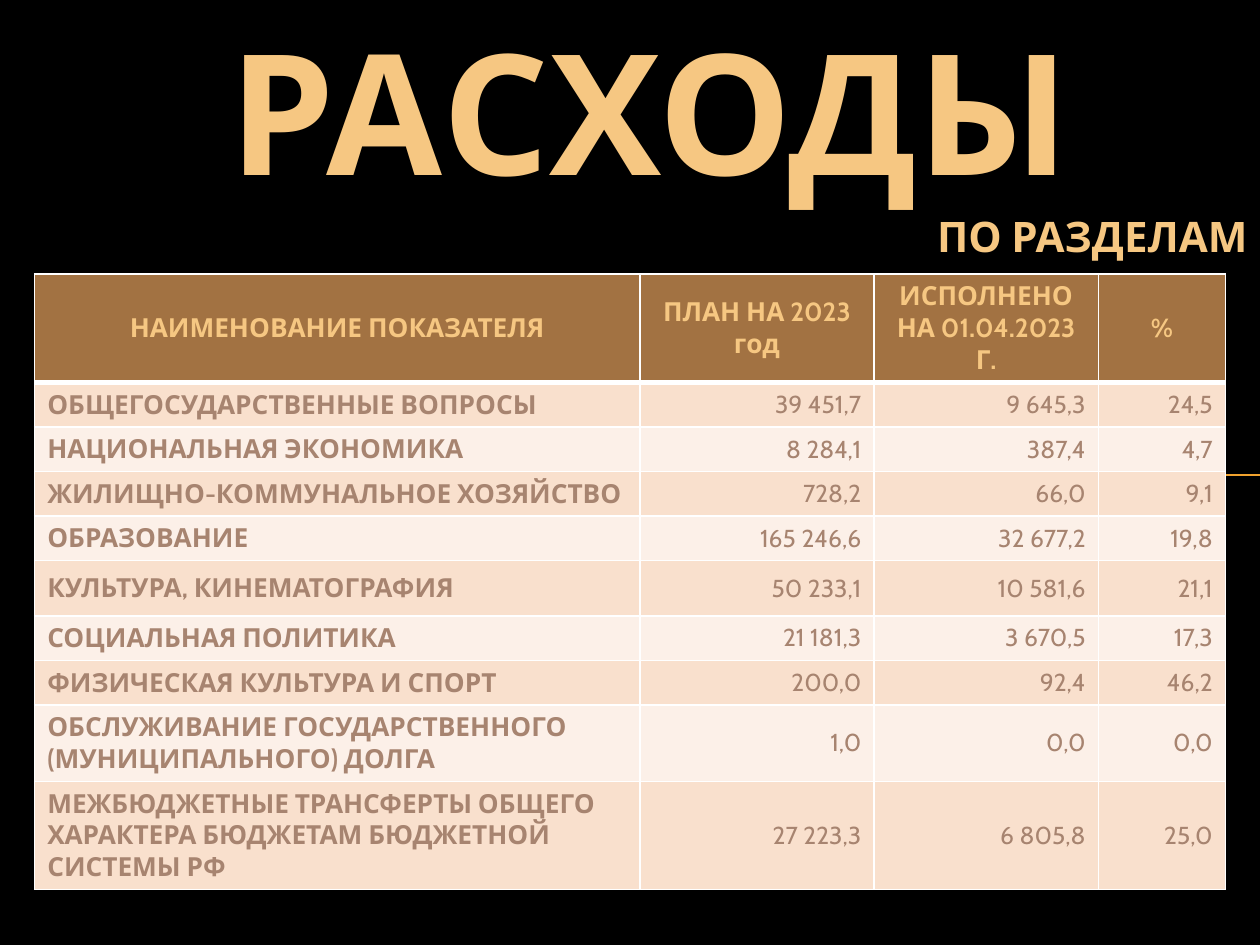
from dataclasses import dataclass

from lxml import etree
from pptx import Presentation
from pptx.dml.color import RGBColor
from pptx.enum.shapes import MSO_CONNECTOR
from pptx.enum.text import MSO_ANCHOR, PP_ALIGN
from pptx.oxml.ns import qn
from pptx.util import Pt

LEFT, CENTER, RIGHT = PP_ALIGN.LEFT, PP_ALIGN.CENTER, PP_ALIGN.RIGHT
TOP, MIDDLE = MSO_ANCHOR.TOP, MSO_ANCHOR.MIDDLE
STRAIGHT = MSO_CONNECTOR.STRAIGHT


@dataclass(frozen=True)
class Theme:
    font: str = "Cabin"
    background: str = "000000"
    heading: str = "F6C782"
    body: str = "A78470"
    accent: str = "F0A22E"
    border: str = "FFFFFF"
    header_fill: str = "A27242"
    bands: tuple = ("F9E0CD", "FCF0E8")
    title_size: int = 96
    subtitle_size: int = 24
    label_size: int = 15
    value_size: int = 14


THEME = Theme()

SLIDE_WIDTH, SLIDE_HEIGHT = 720, 540
HEADERS = ("НАИМЕНОВАНИЕ ПОКАЗАТЕЛЯ", "ПЛАН НА 2023 год",
           "ИСПОЛНЕНО НА 01.04.2023 Г.", "%")
EXPENSES = (
    ("ОБЩЕГОСУДАРСТВЕННЫЕ ВОПРОСЫ", "39 451,7", "9 645,3", "24,5"),
    ("НАЦИОНАЛЬНАЯ ЭКОНОМИКА", "8 284,1", "387,4", "4,7"),
    ("ЖИЛИЩНО-КОММУНАЛЬНОЕ ХОЗЯЙСТВО", "728,2", "66,0", "9,1"),
    ("ОБРАЗОВАНИЕ", "165 246,6", "32 677,2", "19,8"),
    ("КУЛЬТУРА, КИНЕМАТОГРАФИЯ", "50 233,1", "10 581,6", "21,1"),
    ("СОЦИАЛЬНАЯ ПОЛИТИКА", "21 181,3", "3 670,5", "17,3"),
    ("ФИЗИЧЕСКАЯ КУЛЬТУРА И СПОРТ", "200,0", "92,4", "46,2"),
    ("ОБСЛУЖИВАНИЕ ГОСУДАРСТВЕННОГО (МУНИЦИПАЛЬНОГО) ДОЛГА",
     "1,0", "0,0", "0,0"),
    ("МЕЖБЮДЖЕТНЫЕ ТРАНСФЕРТЫ ОБЩЕГО ХАРАКТЕРА БЮДЖЕТАМ БЮДЖЕТНОЙ СИСТЕМЫ РФ",
     "27 223,3", "6 805,8", "25,0"),
)
COLUMN_WIDTHS = (345.8, 133.8, 128.2, 72.6)
LINE_HEIGHT, CELL_PADDING = 18.25, 7.2
ONE_LINE, TWO_LINES, THREE_LINES = (
    lines * LINE_HEIGHT + CELL_PADDING for lines in (1, 2, 3))
CULTURE_HEIGHT = 31.7
ROW_HEIGHTS = (THREE_LINES, *[ONE_LINE] * 4, CULTURE_HEIGHT,
               *[ONE_LINE] * 2, TWO_LINES, THREE_LINES)


def color(value):
    return RGBColor.from_string(value)


def paint(fill, value):
    fill.solid()
    fill.fore_color.rgb = color(value)


def write_text(frame, text, *, size, text_color, bold=True, align=LEFT):
    paragraph = frame.paragraphs[0]
    paragraph.alignment = align
    run = paragraph.add_run()
    run.text = text
    run.font.name = THEME.font
    run.font.size = Pt(size)
    run.font.bold = bold
    run.font.color.rgb = color(text_color)


def add_text_box(slide, text, left, top, width, height, *,
                 anchor=TOP, top_margin=3.6, **text_format):
    shape = slide.shapes.add_textbox(Pt(left), Pt(top), Pt(width), Pt(height))
    frame = shape.text_frame
    frame.word_wrap = True
    frame.vertical_anchor = anchor
    frame.margin_top = Pt(top_margin)
    write_text(frame, text, **text_format)


def add_horizontal_line(slide, left, right, top):
    connector = slide.shapes.add_connector(
        STRAIGHT, Pt(left), Pt(top), Pt(right), Pt(top))
    connector.line.color.rgb = color(THEME.accent)
    connector.line.width = Pt(0.75)
    etree.SubElement(connector._element.spPr, qn("a:effectLst"))


def set_borders(cell, **widths):
    properties = cell._tc.get_or_add_tcPr()
    for position, (side, width) in enumerate(widths.items()):
        border = etree.Element(qn(f"a:{side}"), w=str(Pt(width)))
        fill = etree.SubElement(border, qn("a:solidFill"))
        etree.SubElement(fill, qn("a:srgbClr"), val=THEME.border)
        properties.insert(position, border)


def fill_cell(cell, text, fill, *, top_border=1, bottom_border=1, **text_format):
    paint(cell.fill, fill)
    cell.vertical_anchor = MIDDLE
    set_borders(cell, lnL=1, lnR=1, lnT=top_border, lnB=bottom_border)
    write_text(cell.text_frame, text, **text_format)


def add_expense_table(slide, left, top):
    table = slide.shapes.add_table(
        len(ROW_HEIGHTS), len(COLUMN_WIDTHS), Pt(left), Pt(top),
        Pt(sum(COLUMN_WIDTHS)), Pt(sum(ROW_HEIGHTS))).table
    for column, width in zip(table.columns, COLUMN_WIDTHS):
        column.width = Pt(width)
    for row, height in zip(table.rows, ROW_HEIGHTS):
        row.height = Pt(height)

    header_format = dict(size=THEME.label_size, text_color=THEME.heading, align=CENTER)
    label_format = dict(size=THEME.label_size, text_color=THEME.body)
    value_format = dict(size=THEME.value_size, text_color=THEME.body,
                        bold=False, align=RIGHT)
    header_border = 3

    for column, header in enumerate(HEADERS):
        fill_cell(table.cell(0, column), header, THEME.header_fill,
                  bottom_border=header_border, **header_format)
    for index, expense in enumerate(EXPENSES):
        band = THEME.bands[index % len(THEME.bands)]
        top_border = header_border if index == 0 else 1
        for column, text in enumerate(expense):
            text_format = label_format if column == 0 else value_format
            fill_cell(table.cell(index + 1, column), text, band,
                      top_border=top_border, **text_format)


def main():
    presentation = Presentation()
    presentation.slide_width = Pt(SLIDE_WIDTH)
    presentation.slide_height = Pt(SLIDE_HEIGHT)
    slide = presentation.slides.add_slide(presentation.slide_layouts[6])
    paint(slide.background.fill, THEME.background)
    add_horizontal_line(slide, 40.5, SLIDE_WIDTH, 271.5)
    add_text_box(slide, "РАСХОДЫ", 65.2, 0, 612, 107.3,
                 anchor=MIDDLE, top_margin=19.6,
                 size=THEME.title_size, text_color=THEME.heading, align=CENTER)
    add_expense_table(slide, 19.8, 156.6)
    add_text_box(slide, "ПО РАЗДЕЛАМ", 266.4, 116.6, 453.6, 36,
                 size=THEME.subtitle_size, text_color=THEME.heading, align=RIGHT)
    presentation.save("out.pptx")


if __name__ == "__main__":
    main()
